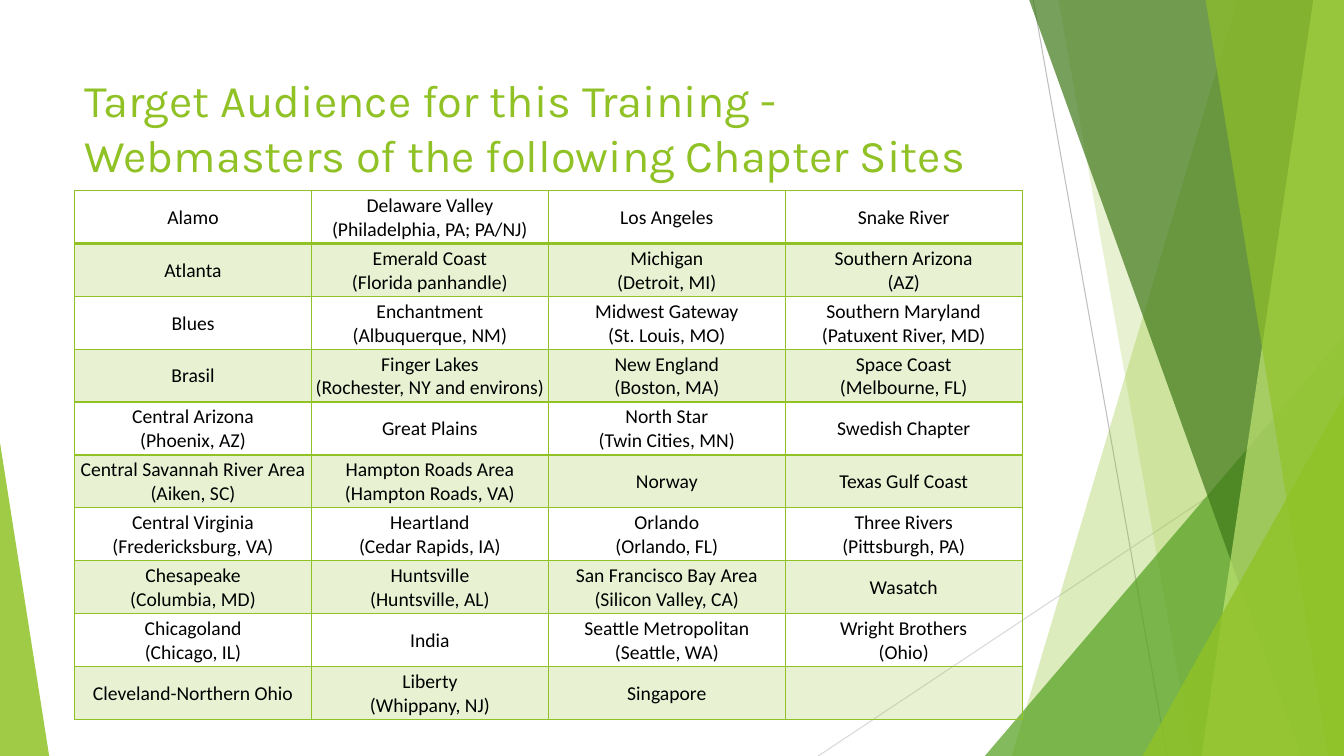
from dataclasses import dataclass

from lxml import etree
from pptx import Presentation
from pptx.dml.color import RGBColor
from pptx.enum.shapes import MSO_CONNECTOR, MSO_SHAPE
from pptx.enum.text import MSO_ANCHOR, PP_ALIGN
from pptx.oxml.ns import qn
from pptx.util import Cm, Pt


@dataclass(frozen=True)
class Theme:
    lime: str = "90C226"
    green: str = "54A021"
    forest: str = "3F7819"
    pale: str = "C0E474"
    text: str = "000000"
    gray: str = "BFBFBF"
    light_gray: str = "D9D9D9"
    title_font: str = "Karla"
    body_font: str = "Calibri"
    title_size: float = 32.4
    body_size: float = 14


theme = Theme()
WIDTH, HEIGHT = 33.87, 19.05


def paint(fill, properties, color, opacity):
    """Fill with a colour at an opacity in percent; properties is the XML parent of the fill."""
    fill.solid()
    fill.fore_color.rgb = RGBColor.from_string(color)
    color_node = properties.find(qn("a:solidFill"))[0]
    etree.SubElement(color_node, qn("a:alpha"), val=str(opacity * 1000))


def style_text(frame, font, size, color, align):
    for para in frame.paragraphs:
        para.alignment = align
        for span in para.runs:
            span.font.name = font
            span.font.size = Pt(size)
            span.font.color.rgb = RGBColor.from_string(color)


deck = Presentation()
deck.slide_width, deck.slide_height = Cm(WIDTH), Cm(HEIGHT)
page = deck.slides.add_slide(deck.slide_layouts[6])

# Thin diagonal lines
for x1, y1, x2, y2, color in [
    (26.04, 0, 29.41, HEIGHT, theme.gray),
    (WIDTH, 10.24, 20.62, HEIGHT, theme.light_gray),
]:
    line = page.shapes.add_connector(MSO_CONNECTOR.STRAIGHT, Cm(x1), Cm(y1), Cm(x2), Cm(y2))
    line.line.color.rgb = RGBColor.from_string(color)
    line.line.width = Pt(0.75)
    etree.SubElement(line.element.spPr, qn("a:effectLst"))

# Bands run to the right edge: (top left x, bottom left x).
# Triangles stand on the bottom edge: (left, top, width, apex position).
facets = [
    ((31.19, 25.5), theme.lime, 30),
    ((26.67, 30.05), theme.lime, 20),
    ((24.82, 8.46, 9.05, 1), theme.green, 72),
    ((25.93, 32.79), theme.forest, 70),
    ((33.1, 30.28), theme.pale, 70),
    ((30.38, 33.48), theme.lime, 65),
    ((28.8, 9.98, 5.07, 1), theme.lime, 80),
    ((0, 11.15, 1.24, 0), theme.lime, 85),
]
for geometry, color, opacity in facets:
    if len(geometry) == 2:
        top_x, bottom_x = geometry
        outline = page.shapes.build_freeform(Cm(top_x), Cm(-0.02))
        corners = [(WIDTH, -0.02), (WIDTH, HEIGHT), (bottom_x, HEIGHT)]
        outline.add_line_segments([(Cm(x), Cm(y)) for x, y in corners], close=True)
        facet = outline.convert_to_shape()
    else:
        left, top, width, apex = geometry
        facet = page.shapes.add_shape(
            MSO_SHAPE.ISOSCELES_TRIANGLE, Cm(left), Cm(top), Cm(width), Cm(HEIGHT - top)
        )
        facet.adjustments[0] = apex
    facet.shadow.inherit = False
    facet.line.fill.background()
    paint(facet.fill, facet.element.spPr, color, opacity)

title = page.shapes.add_textbox(Cm(1.88), Cm(1.7), Cm(23.88), Cm(3.66))
title.text_frame.word_wrap = True
title.text_frame.text = "Target Audience for this Training -\vWebmasters of the following Chapter Sites"
style_text(title.text_frame, theme.title_font, theme.title_size, theme.lime, PP_ALIGN.LEFT)

chapters = [
    ["Alamo", "Delaware Valley\n(Philadelphia, PA; PA/NJ)", "Los Angeles", "Snake River"],
    ["Atlanta", "Emerald Coast\n(Florida panhandle)", "Michigan\n(Detroit, MI)",
     "Southern Arizona\n(AZ)"],
    ["Blues", "Enchantment\n(Albuquerque, NM)", "Midwest Gateway\n(St. Louis, MO)",
     "Southern Maryland\n(Patuxent River, MD)"],
    ["Brasil", "Finger Lakes\n(Rochester, NY and environs)", "New England\n(Boston, MA)",
     "Space Coast\n(Melbourne, FL)"],
    ["Central Arizona\n(Phoenix, AZ)", "Great Plains", "North Star\n(Twin Cities, MN)",
     "Swedish Chapter"],
    ["Central Savannah River Area\n(Aiken, SC)", "Hampton Roads Area\n(Hampton Roads, VA)",
     "Norway", "Texas Gulf Coast"],
    ["Central Virginia\n(Fredericksburg, VA)", "Heartland\n(Cedar Rapids, IA)",
     "Orlando\n(Orlando, FL)", "Three Rivers\n(Pittsburgh, PA)"],
    ["Chesapeake\n(Columbia, MD)", "Huntsville\n(Huntsville, AL)",
     "San Francisco Bay Area\n(Silicon Valley, CA)", "Wasatch"],
    ["Chicagoland\n(Chicago, IL)", "India", "Seattle Metropolitan\n(Seattle, WA)",
     "Wright Brothers\n(Ohio)"],
    ["Cleveland-Northern Ohio", "Liberty\n(Whippany, NJ)", "Singapore", ""],
]
table = page.shapes.add_table(
    len(chapters), len(chapters[0]), Cm(1.88), Cm(4.8), Cm(23.88), Cm(13.33)
).table
table.first_row = False
table.horz_banding = False

for row_index, names in enumerate(chapters):
    for column_index, name in enumerate(names):
        cell = table.cell(row_index, column_index)
        cell.text_frame.text = name
        cell.vertical_anchor = MSO_ANCHOR.MIDDLE
        cell.margin_left = cell.margin_right = cell.margin_top = Cm(0.03)
        cell.margin_bottom = 0
        style_text(cell.text_frame, theme.body_font, theme.body_size, theme.text, PP_ALIGN.CENTER)

        properties = cell._tc.get_or_add_tcPr()
        for side in ("L", "R", "T", "B"):
            heavy = (row_index == 0 and side == "B") or (row_index == 1 and side == "T")
            border = etree.SubElement(properties, qn(f"a:ln{side}"), w=str(Pt(2 if heavy else 1)))
            border_fill = etree.SubElement(border, qn("a:solidFill"))
            etree.SubElement(border_fill, qn("a:srgbClr"), val=theme.lime)
        if row_index % 2:
            paint(cell.fill, properties, theme.lime, 20)
        else:
            cell.fill.background()

deck.save("out.pptx")
